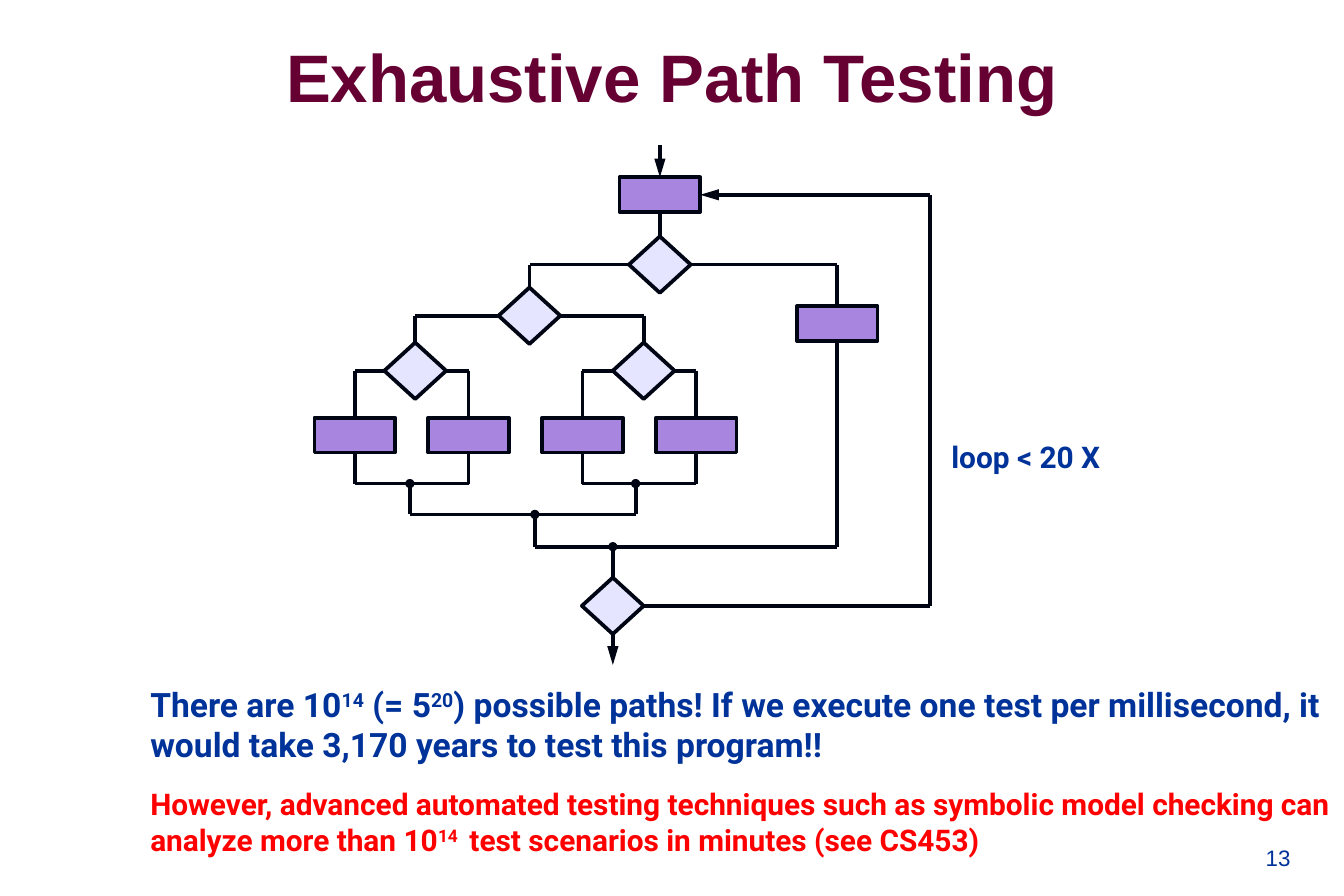
"""Build the Exhaustive Path Testing slide: a flow graph with its path count."""
from dataclasses import dataclass

from lxml.etree import SubElement
from pptx import Presentation
from pptx.dml.color import RGBColor
from pptx.enum.shapes import MSO_CONNECTOR, MSO_SHAPE
from pptx.enum.text import MSO_ANCHOR, PP_ALIGN
from pptx.oxml.ns import qn
from pptx.util import Inches, Pt

INK, NAVY, PURPLE, LILAC = "000514", "003399", "A886E0", "E5E5FF"
TOP, LEFT, BOTTOM, RIGHT = range(4)
COLS, ROWS = 100, 66.7
LEAF_ROW = 32.4

prs = Presentation()
prs.slide_width, prs.slide_height = Inches(10), Inches(6.67)
s = prs.slides.add_slide(prs.slide_layouts[6])


@dataclass
class Node:
    """A flow graph box or decision, centred on a grid point."""
    x: float
    y: float
    kind: MSO_SHAPE = MSO_SHAPE.RECTANGLE
    w: float = 6.0
    h: float = 2.6
    fill: str = PURPLE
    sp: object = None


@dataclass
class Port:
    """A connection site on a node."""
    node: Node
    site: int


@dataclass
class Point:
    """A free point on the grid."""
    x: float
    y: float


@dataclass
class Label:
    """A text box; carets enclose superscripts."""
    text: str
    x: float
    y: float
    w: float
    h: float
    size: int
    color: str
    font: str = "Roboto"
    bold: bool = True
    align: PP_ALIGN = PP_ALIGN.LEFT
    anchor: MSO_ANCHOR = MSO_ANCHOR.TOP
    wrap: bool = True


def col(n: float) -> int:
    """Convert grid columns to a length."""
    return round(prs.slide_width * n / COLS)


def row(n: float) -> int:
    """Convert grid rows to a length."""
    return round(prs.slide_height * n / ROWS)


def rgb(color: str) -> RGBColor:
    """Convert a hex string to a colour."""
    return RGBColor.from_string(color)


def decision(x: float, y: float) -> Node:
    """Describe a decision diamond."""
    return Node(x, y, MSO_SHAPE.DIAMOND, 4.6, 4.2, LILAC)


def dot(x: float, y: float) -> Node:
    """Describe a junction dot."""
    return Node(x, y, MSO_SHAPE.OVAL, 0.4, 0.4, "000000")


def draw_node(n: Node) -> None:
    """Draw a node and keep its shape for connectors."""
    n.sp = s.shapes.add_shape(n.kind, col(n.x - n.w / 2), row(n.y - n.h / 2), col(n.w), row(n.h))
    n.sp.shadow.inherit = False
    n.sp.fill.solid()
    n.sp.fill.fore_color.rgb = rgb(n.fill)
    n.sp.line.color.rgb = rgb(INK)
    n.sp.line.width = Pt(2)


def link(a: Port | Point, b: Port | Point, arrow: bool = False) -> None:
    """Draw a straight connector between ports or points."""
    ends = [e.node if isinstance(e, Port) else e for e in (a, b)]
    c = s.shapes.add_connector(MSO_CONNECTOR.STRAIGHT, col(ends[0].x), row(ends[0].y),
                               col(ends[1].x), row(ends[1].y))
    if isinstance(a, Port):
        c.begin_connect(a.node.sp, a.site)
    if isinstance(b, Port):
        c.end_connect(b.node.sp, b.site)
    c.line.color.rgb = rgb(INK)
    c.line.width = Pt(2)
    if arrow:
        SubElement(c.line._get_or_add_ln(), qn("a:tailEnd"), type="triangle", w="med", len="lg")
    SubElement(c._element.spPr, qn("a:effectLst"))


def branch(parent: Node, left: Node, right: Node) -> None:
    """Link a decision to the nodes on both its sides."""
    for child, site in ((left, LEFT), (right, RIGHT)):
        corner = Point(child.x, parent.y)
        link(Port(parent, site), corner)
        link(corner, Port(child, TOP))


def merge(left: Node, right: Node, joint: Node) -> None:
    """Bring two paths down and together at a junction."""
    for source in (left, right):
        corner = Point(source.x, joint.y)
        start = Point(source.x, source.y) if source.kind == MSO_SHAPE.OVAL else Port(source, BOTTOM)
        link(start, corner)
        link(corner, Point(joint.x, joint.y))


def draw_label(t: Label) -> None:
    """Draw a text box."""
    tf = s.shapes.add_textbox(col(t.x), row(t.y), col(t.w), row(t.h)).text_frame
    tf.word_wrap = t.wrap
    tf.vertical_anchor = t.anchor
    p = tf.paragraphs[0]
    p.alignment = t.align
    f = p.font
    f.name, f.size, f.bold = t.font, Pt(t.size), t.bold
    f.color.rgb = rgb(t.color)
    for i, part in enumerate(t.text.split("^")):
        r = p.add_run()
        r.text = part
        if i % 2:
            r._r.get_or_add_rPr().set("baseline", "30000")


start, side = Node(49.1, 14.5), Node(62.3, 24.1)
first, second = decision(49.1, 19.7), decision(39.4, 23.5)
third, fourth = decision(30.9, 27.6), decision(47.9, 27.6)
again = decision(45.6, 45.1)
leaves = [Node(26.4 + 8.47 * i, LEAF_ROW) for i in range(4)]
joint_a, joint_b = dot(30.5, 36), dot(47.3, 36)
joint_c, joint_d = dot(39.8, 38.3), dot(45.6, 40.7)

LABELS = [
    Label("Exhaustive Path Testing", 8.1, 2.8, 83.8, 5.6, 36, "660033", "Arial",
          align=PP_ALIGN.CENTER, anchor=MSO_ANCHOR.MIDDLE),
    Label("loop < 20 X", 69.8, 32.2, 13.8, 3.6, 16, NAVY, wrap=False),
    Label("There are 10^14^ (= 5^20^) possible paths! If we execute one test per millisecond, "
          "it would take 3,170 years to test this program!!", 10.2, 50.4, 89.8, 10.1, 18, NAVY),
    Label("However, advanced automated testing techniques such as symbolic model checking can "
          "analyze more than 10^14 ^ test scenarios in minutes (see CS453)",
          10.2, 58, 90.4, 9.6, 16, "FF0000"),
    Label("13", 90.1, 60.7, 6.9, 4.6, 12, NAVY, "Arial", False, PP_ALIGN.RIGHT, MSO_ANCHOR.BOTTOM),
]

for node in (start, side, first, second, third, fourth, again, *leaves,
             joint_a, joint_b, joint_c, joint_d):
    draw_node(node)

link(Point(start.x, 10.8), Port(start, TOP), arrow=True)
link(Port(start, BOTTOM), Port(first, TOP))
branch(first, second, side)
branch(second, third, fourth)
branch(third, *leaves[:2])
branch(fourth, *leaves[2:])
merge(*leaves[:2], joint_a)
merge(*leaves[2:], joint_b)
merge(joint_a, joint_b, joint_c)
merge(joint_c, side, joint_d)
link(Point(joint_d.x, joint_d.y), Port(again, TOP))
link(Port(again, BOTTOM), Point(again.x, 49.5), arrow=True)

loop_low, loop_high = Point(69.2, again.y), Point(69.2, start.y)
link(Port(again, RIGHT), loop_low)
link(loop_low, loop_high)
link(loop_high, Port(start, RIGHT), arrow=True)

for label in LABELS:
    draw_label(label)

prs.save("out.pptx")
